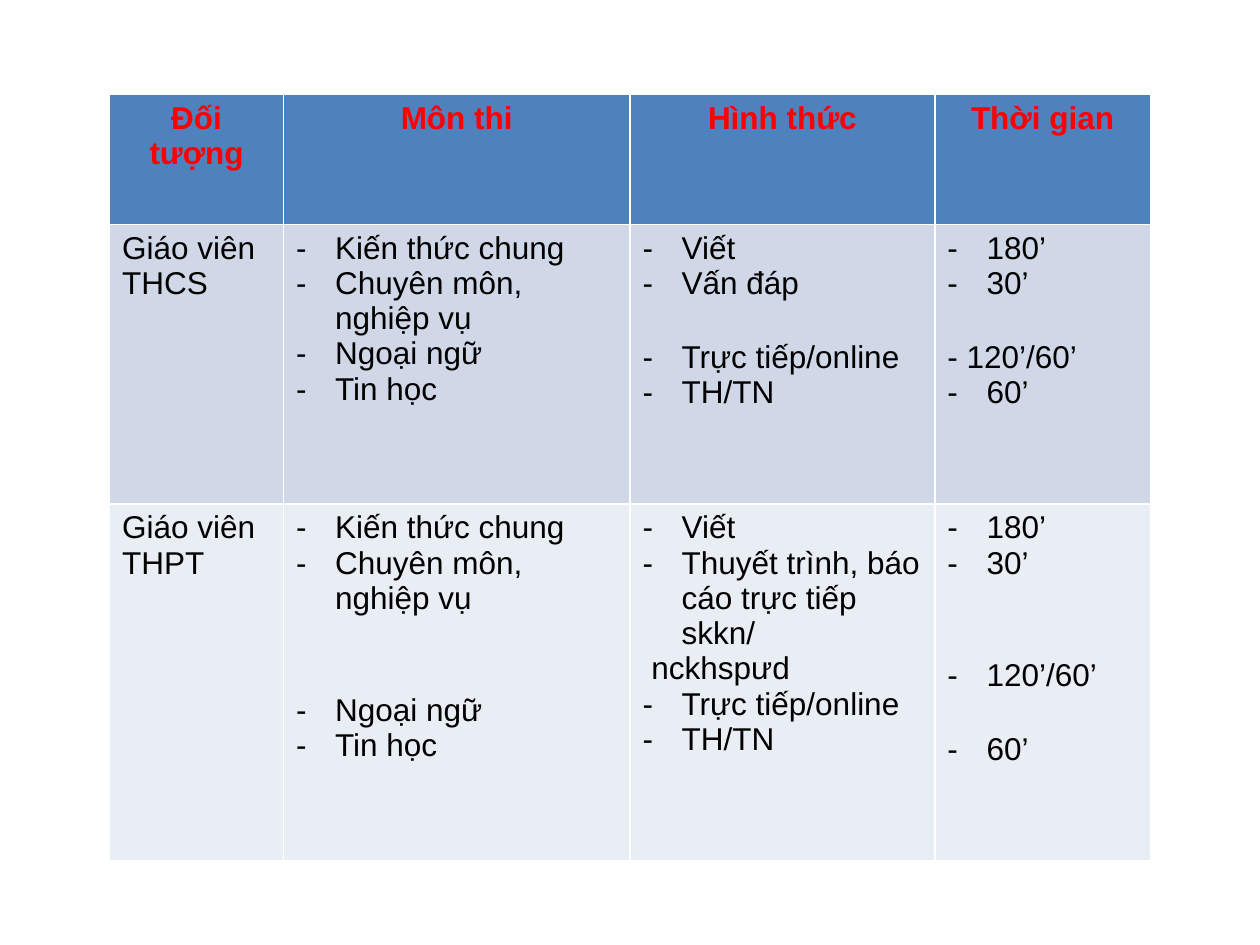
from lxml import etree
from pptx import Presentation
from pptx.dml.color import RGBColor
from pptx.enum.text import PP_ALIGN
from pptx.oxml.ns import qn
from pptx.util import Inches, Pt

CENTER, LEFT = PP_ALIGN.CENTER, PP_ALIGN.LEFT
COLORS = {"header": "4F81BD", "thcs": "D0D8E8", "thpt": "E9EDF4",
          "heading": "FF0000", "body": "000000"}
GAP = 22  # height of one skipped line, in points


def write(paragraph, text, color="body", bold=False, align=LEFT,
          dash=False, indent=0, before=0):
    props = paragraph._p.get_or_add_pPr()
    if dash:
        props.set("marL", str(Inches(0.31)))
        props.set("indent", str(-Inches(0.31)))
        etree.SubElement(props, qn("a:buFont")).set("typeface", "Arial")
        etree.SubElement(props, qn("a:buChar")).set("char", "-")
    elif indent:
        props.set("marL", str(Inches(indent)))
        props.set("indent", "0")
    paragraph.alignment = align
    if before:
        paragraph.space_before = Pt(before)
    run = paragraph.add_run()
    run.text = text
    run.font.name = "Arial"
    run.font.size = Pt(18)
    run.font.bold = bold
    run.font.color.rgb = RGBColor.from_string(COLORS[color])


prs = Presentation()
prs.slide_width, prs.slide_height = Inches(10), Inches(7.5)
slide = prs.slides.add_slide(prs.slide_layouts[6])

# Each line is its text plus any format that differs from a dashed item
headings = ["Đối tượng", "Môn thi", "Hình thức", "Thời gian"]
skip, skip_two = {"before": GAP}, {"before": 2 * GAP}
plain = {"dash": False}
teachers = [
    ("thcs", [
        [("Giáo viên THCS", plain)],
        [("Kiến thức chung", {}), ("Chuyên môn, nghiệp vụ", {}),
         ("Ngoại ngữ", {}), ("Tin học", {})],
        [("Viết", {}), ("Vấn đáp", {}),
         ("Trực tiếp/online", skip), ("TH/TN", {})],
        [("180’", {}), ("30’", {}),
         ("- 120’/60’", {**plain, **skip}), ("60’", {})],
    ]),
    ("thpt", [
        [("Giáo viên THPT", plain)],
        [("Kiến thức chung", {}), ("Chuyên môn, nghiệp vụ", {}),
         ("Ngoại ngữ", skip_two), ("Tin học", {})],
        [("Viết", {}), ("Thuyết trình, báo cáo trực tiếp skkn/", {}),
         ("nckhspưd", {**plain, "indent": 0.07}),
         ("Trực tiếp/online", {}), ("TH/TN", {})],
        [("180’", {}), ("30’", {}),
         ("120’/60’", skip_two), ("60’", skip)],
    ]),
]

# Exam table; its default style draws the white borders
exams = slide.shapes.add_table(3, 4, Inches(0.87), Inches(0.75),
                               Inches(8.25), Inches(6.08)).table
for column, width in zip(exams.columns, [1.38, 2.75, 2.42, 1.71]):
    column.width = Inches(width)
for row, height in zip(exams.rows, [1.03, 2.22, 2.83]):
    row.height = Inches(height)

# Header and teacher rows
heading_format = {"color": "heading", "bold": True, "align": CENTER, "dash": False}
header = ("header", [[(text, heading_format)] for text in headings])
for row, (fill, contents) in zip(exams.rows, [header, *teachers]):
    for cell, lines in zip(row.cells, contents):
        cell.fill.solid()
        cell.fill.fore_color.rgb = RGBColor.from_string(COLORS[fill])
        frame = cell.text_frame
        for number, (text, style) in enumerate(lines):
            paragraph = frame.add_paragraph() if number else frame.paragraphs[0]
            write(paragraph, text, **{"dash": True, **style})

prs.save("out.pptx")
